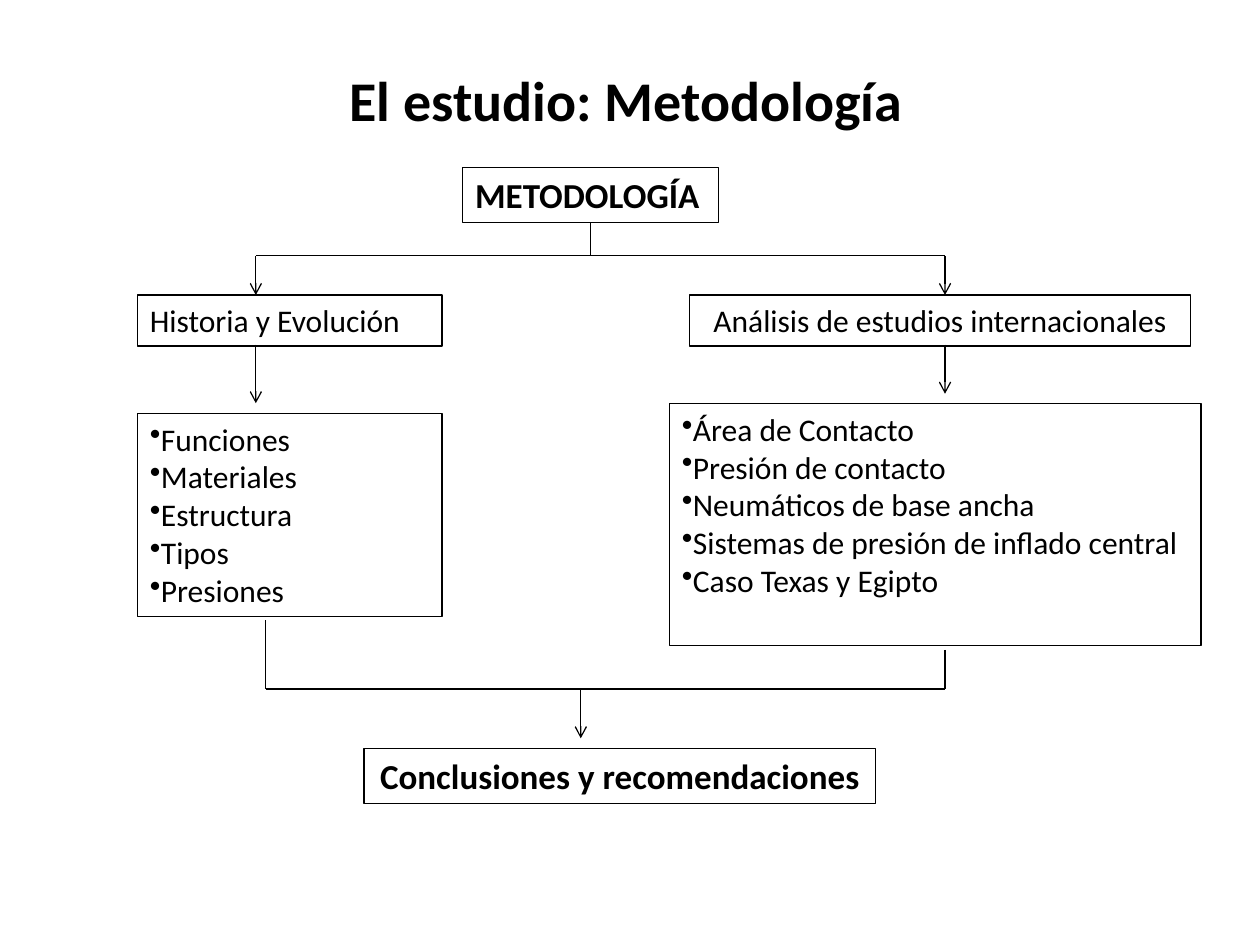
from lxml.etree import SubElement
from pptx import Presentation
from pptx.dml.color import RGBColor
from pptx.enum.shapes import MSO_CONNECTOR, MSO_SHAPE
from pptx.enum.text import MSO_ANCHOR, PP_ALIGN
from pptx.oxml.ns import qn
from pptx.util import Pt

THEME = {
    "font": "Calibri",
    "ink": RGBColor(0, 0, 0),
    "title": 32,
    "heading": 20,
    "body": 18,
    "line": 0.75,
}

TITLE = "El estudio: Metodología"
HEADING = {"size": THEME["heading"], "bold": True}
CENTER = {"align": PP_ALIGN.CENTER}

# Lines of text, (left, top, width, height), text format
BOXES = [
    (["METODOLOGÍA"], (264.4, 95.6, 146, 31.7), HEADING),
    (["Historia y Evolución"], (78.5, 168.6, 174.2, 29.1), {}),
    (["Análisis de estudios internacionales"], (394, 168.6, 286.4, 29.1), CENTER),
    (["Funciones", "Materiales", "Estructura", "Tipos", "Presiones"],
     (78.5, 236.2, 174.2, 116.3), {"bullet": "•"}),
    (["Área de Contacto", "Presión de contacto", "Neumáticos de base ancha",
      "Sistemas de presión de inflado central", "Caso Texas y Egipto"],
     (382.5, 230.6, 303.8, 138.2), {"bullet": "•"}),
    (["Conclusiones y recomendaciones"], (208, 427.6, 292.4, 31.5),
     {**HEADING, **CENTER}),
]

LEFT_X, RIGHT_X = 146.2, 540
LEFT_EXIT_X, TOP_X, BOTTOM_X = 151.9, 337.5, 331.9
SPLIT_Y, MERGE_Y = 146.2, 393.8

# Start, end
PLAIN_LINES = [
    ((TOP_X, 127.3), (TOP_X, SPLIT_Y)),
    ((LEFT_X, SPLIT_Y), (RIGHT_X, SPLIT_Y)),
    ((LEFT_EXIT_X, 354.4), (LEFT_EXIT_X, MERGE_Y)),
    ((RIGHT_X, 371.4), (RIGHT_X, MERGE_Y)),
    ((LEFT_EXIT_X, MERGE_Y), (RIGHT_X, MERGE_Y)),
]
ARROWS = [
    ((LEFT_X, SPLIT_Y), (LEFT_X, 168.6)),
    ((RIGHT_X, SPLIT_Y), (RIGHT_X, 168.6)),
    ((LEFT_X, 197), (LEFT_X, 230.4)),
    ((RIGHT_X, 196.9), (RIGHT_X, 225)),
    ((BOTTOM_X, MERGE_Y), (BOTTOM_X, 421.9)),
]


def write_text(shape, lines, size=THEME["body"], bold=False,
               align=PP_ALIGN.LEFT, anchor=MSO_ANCHOR.TOP, bullet=None):
    frame = shape.text_frame
    frame.word_wrap = True
    frame.vertical_anchor = anchor
    for index, line in enumerate(lines):
        paragraph = frame.paragraphs[0] if index == 0 else frame.add_paragraph()
        paragraph.alignment = align
        if bullet:
            properties = paragraph._p.get_or_add_pPr()
            SubElement(properties, qn("a:buChar"), char=bullet)
        run = paragraph.add_run()
        run.text = line
        run.font.name = THEME["font"]
        run.font.size = Pt(size)
        run.font.bold = bold
        run.font.color.rgb = THEME["ink"]


def style_line(line):
    line.color.rgb = THEME["ink"]
    line.width = Pt(THEME["line"])


def add_box(slide, lines, bounds, text_format):
    shape = slide.shapes.add_shape(MSO_SHAPE.RECTANGLE, *map(Pt, bounds))
    shape.shadow.inherit = False
    shape.fill.background()
    style_line(shape.line)
    write_text(shape, lines, **text_format)


def add_line(slide, start, end, arrow=False):
    connector = slide.shapes.add_connector(
        MSO_CONNECTOR.STRAIGHT, *map(Pt, start + end))
    style_line(connector.line)
    properties = connector._element.spPr
    if arrow:
        SubElement(properties.find(qn("a:ln")), qn("a:tailEnd"), type="arrow")
    SubElement(properties, qn("a:effectLst"))


def main():
    presentation = Presentation()
    presentation.slide_width, presentation.slide_height = Pt(720), Pt(540)
    slide = presentation.slides.add_slide(presentation.slide_layouts[6])

    title = slide.shapes.add_textbox(Pt(34), Pt(11.5), Pt(648), Pt(90))
    write_text(title, [TITLE], size=THEME["title"], bold=True,
               align=PP_ALIGN.CENTER, anchor=MSO_ANCHOR.MIDDLE)
    for lines, bounds, text_format in BOXES:
        add_box(slide, lines, bounds, text_format)
    for start, end in PLAIN_LINES:
        add_line(slide, start, end)
    for start, end in ARROWS:
        add_line(slide, start, end, arrow=True)

    presentation.save("out.pptx")


if __name__ == "__main__":
    main()
